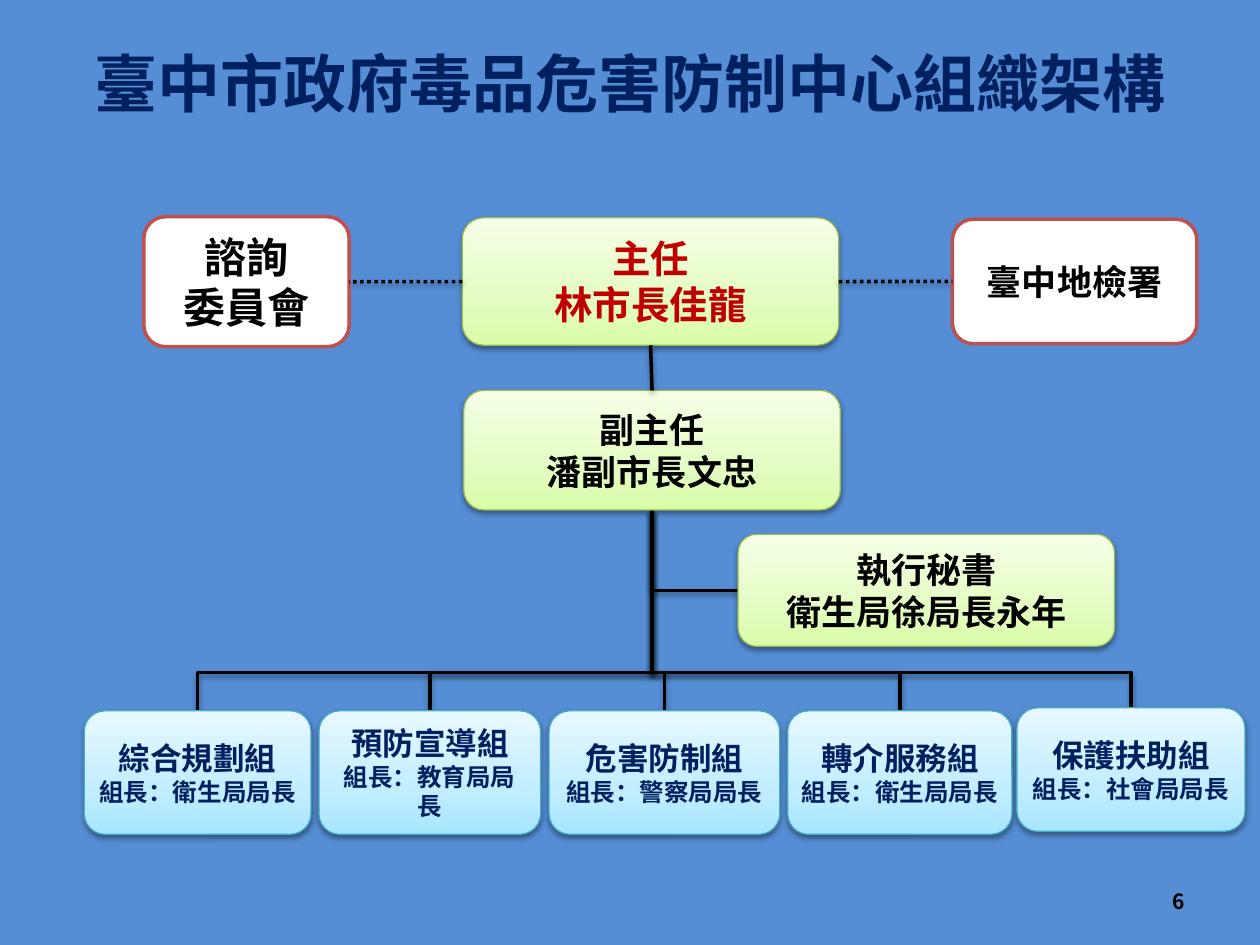
from copy import deepcopy

from lxml.etree import SubElement
from pptx import Presentation
from pptx.dml.color import RGBColor
from pptx.enum.dml import MSO_LINE
from pptx.enum.shapes import MSO_CONNECTOR as LINK, MSO_SHAPE
from pptx.enum.text import MSO_ANCHOR as ANCHOR, PP_ALIGN as ALIGN
from pptx.oxml.ns import qn
from pptx.util import Cm, Pt

CJK = "Noto Sans CJK SC"
BLACK, NAVY, RED = "000000", "002060", "C00000"
TITLE = "臺中市政府毒品危害防制中心組織架構"
PAGE_NUMBER = "6"

# Fill stops run from the bottom of a box to its top.
GREEN = {"fill": ["DAFDA7", "E4FCC2", "F5FFE7"], "line": "98B955", "width": 0.75}
BLUE = {"fill": ["A7E6FF", "C1EDFF", "E7F8FF"], "line": "46AAC5", "width": 0.75}
WHITE = {"fill": ["FFFFFF"], "line": "C0504D", "width": 2}
STOP_POSITIONS = (0, 0.35, 1)

# name: (left, top, width, height in cm), look, text colour, [(text, size)]
OFFICES = {
    "director": ((9.32, 4.39, 7.59, 2.57), GREEN, RED, [("主任", 22), ("林市長佳龍", 22)]),
    "deputy": ((9.35, 7.87, 7.59, 2.41), GREEN, BLACK, [("副主任", 20), ("潘副市長文忠", 20)]),
    "secretary": ((14.88, 10.77, 7.59, 2.26), GREEN, BLACK,
                  [("執行秘書", 20), ("衛生局徐局長永年", 20)]),
    "committee": ((2.9, 4.37, 4.14, 2.62), WHITE, BLACK, [("諮詢", 24), ("委員會", 24)]),
    "prosecutors": ((19.2, 4.42, 4.93, 2.51), WHITE, BLACK, [("臺中地檢署", 20)]),
}

# team, leader, left, top, width in cm, connector width in points
TEAMS = [
    ("綜合規劃組", "組長：衛生局局長", 1.7, 14.33, 4.57, 2),
    ("預防宣導組", "組長：教育局局長", 6.43, 14.33, 4.47, 2),
    ("危害防制組", "組長：警察局局長", 11.07, 14.33, 4.65, 1.5),
    ("轉介服務組", "組長：衛生局局長", 15.88, 14.33, 4.52, 2),
    ("保護扶助組", "組長：社會局局長", 20.5, 14.27, 4.6, 2),
]
TEAM_HEIGHT = 2.49
BUS_Y = 13.56

# from, side, to, side, dash
STRAIGHT_LINKS = [
    ("director", 2, "deputy", 0, None),
    ("director", 1, "committee", 3, MSO_LINE.ROUND_DOT),
    ("director", 3, "prosecutors", 1, MSO_LINE.ROUND_DOT),
]


def rgb(code):
    return RGBColor.from_string(code)


def style(paragraph, size, colour, align, latin=CJK):
    paragraph.alignment = align
    font = paragraph.font
    font.name, font.size, font.bold = latin, Pt(size), True
    font.color.rgb = rgb(colour)
    properties = paragraph._p.pPr.find(qn("a:defRPr"))
    SubElement(properties, qn("a:ea"), typeface=CJK)


def add_shadow(effects):
    """Put a soft shadow straight below into an empty effect list."""
    shadow = SubElement(effects, qn("a:outerShdw"), blurRad="40000", dist="20000",
                        dir="5400000", rotWithShape="0")
    colour = SubElement(shadow, qn("a:srgbClr"), val=BLACK)
    SubElement(colour, qn("a:alpha"), val="38000")


def fill_box(box, colours):
    if len(colours) == 1:
        box.fill.solid()
        box.fill.fore_color.rgb = rgb(colours[0])
        return
    box.fill.gradient()
    box.fill.gradient_angle = 90
    stops = box._element.spPr.find(".//" + qn("a:gsLst"))
    stops.insert(1, deepcopy(stops[0]))
    for stop, position, colour in zip(box.fill.gradient_stops, STOP_POSITIONS, colours):
        stop.position = position
        stop.color.rgb = rgb(colour)


def add_box(slide, place, look, colour, lines):
    box = slide.shapes.add_shape(MSO_SHAPE.ROUNDED_RECTANGLE, *map(Cm, place))
    fill_box(box, look["fill"])
    box.line.color.rgb = rgb(look["line"])
    box.line.width = Pt(look["width"])
    box.shadow.inherit = False
    if look is not WHITE:
        add_shadow(box._element.spPr.find(qn("a:effectLst")))
    frame = box.text_frame
    frame.word_wrap = True
    frame.vertical_anchor = ANCHOR.MIDDLE
    frame.margin_left = frame.margin_right = Cm(0.15)
    frame.margin_top = frame.margin_bottom = Cm(0.08)
    frame.text = "\n".join(text for text, _ in lines)
    for paragraph, (_, size) in zip(frame.paragraphs, lines):
        style(paragraph, size, colour, ALIGN.CENTER)
    return box


def format_link(link, width):
    link.line.color.rgb = rgb(BLACK)
    link.line.width = Pt(width)
    add_shadow(SubElement(link._element.spPr, qn("a:effectLst")))


def add_elbow(slide, start, end, width, bend_y=None):
    """Draw an elbow that leaves downwards, turning back down if bend_y is given."""
    (x1, y1), (x2, y2) = start, end
    length, spread = y2 - y1, abs(x2 - x1)
    left = (x1 + x2 - length) / 2
    top = (y1 + y2 - spread) / 2
    link = slide.shapes.add_connector(
        LINK.ELBOW, *map(Cm, (left, top, left + length, top + spread)))
    frame = link._element.spPr.find(qn("a:xfrm"))
    frame.set("rot", "5400000" if x2 < x1 else "16200000")
    if x2 > x1:
        frame.set("flipH", "1")
    geometry = link._element.spPr.find(qn("a:prstGeom"))
    if bend_y is None:
        geometry.set("prst", "bentConnector2")
    else:
        bend = round((bend_y - y1) / length * 100000)
        SubElement(geometry.find(qn("a:avLst")), qn("a:gd"), name="adj1", fmla=f"val {bend}")
    format_link(link, width)


def main():
    deck = Presentation()
    deck.slide_width, deck.slide_height = Cm(25.4), Cm(19.05)
    slide = deck.slides.add_slide(deck.slide_layouts[5])
    slide.background.fill.solid()
    slide.background.fill.fore_color.rgb = rgb("558ED5")

    title = slide.shapes.title
    title.left, title.top, title.width, title.height = map(Cm, (1.27, 0.76, 22.86, 3.18))
    title.text_frame.text = TITLE
    title.text_frame.vertical_anchor = ANCHOR.TOP
    style(title.text_frame.paragraphs[0], 36, NAVY, ALIGN.CENTER, "Times New Roman")

    left, top, width, height = OFFICES["deputy"][0]
    trunk = (left + width / 2, top + height)
    for team, leader, left, top, width, weight in TEAMS:
        add_elbow(slide, trunk, (left + width / 2, top), weight, BUS_Y)
        add_box(slide, (left, top, width, TEAM_HEIGHT), BLUE, NAVY, [(team, 18), (leader, 14)])

    left, top, _, height = OFFICES["secretary"][0]
    add_elbow(slide, trunk, (left, top + height / 2), 2)

    boxes = {name: add_box(slide, *office) for name, office in OFFICES.items()}
    for source, source_side, target, target_side, dash in STRAIGHT_LINKS:
        link = slide.shapes.add_connector(LINK.STRAIGHT, 0, 0, 0, 0)
        link.begin_connect(boxes[source], source_side)
        link.end_connect(boxes[target], target_side)
        if dash:
            link.line.dash_style = dash
        format_link(link, 2)

    number = slide.shapes.add_textbox(*map(Cm, (18.42, 17.65, 5.71, 1.02))).text_frame
    number.word_wrap = True
    number.vertical_anchor = ANCHOR.MIDDLE
    number.text = PAGE_NUMBER
    style(number.paragraphs[0], 12, BLACK, ALIGN.RIGHT)

    deck.save("out.pptx")


if __name__ == "__main__":
    main()
